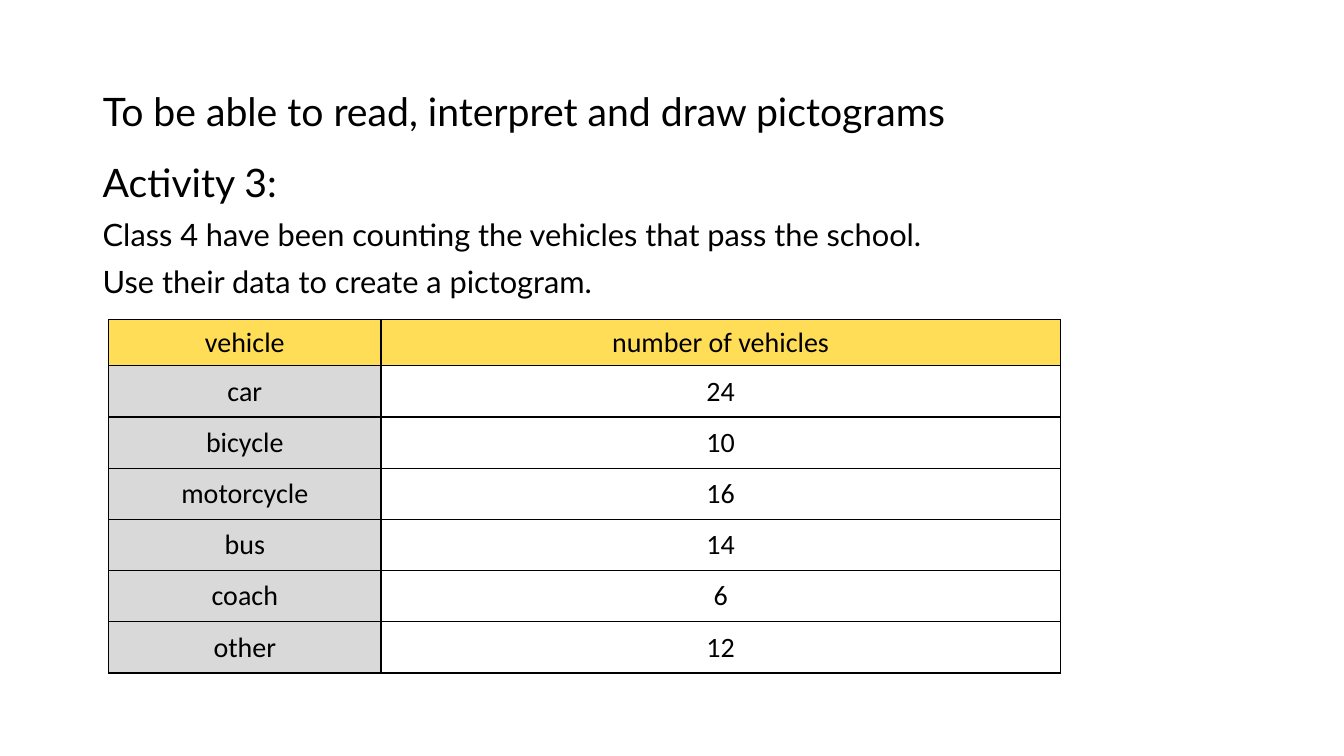
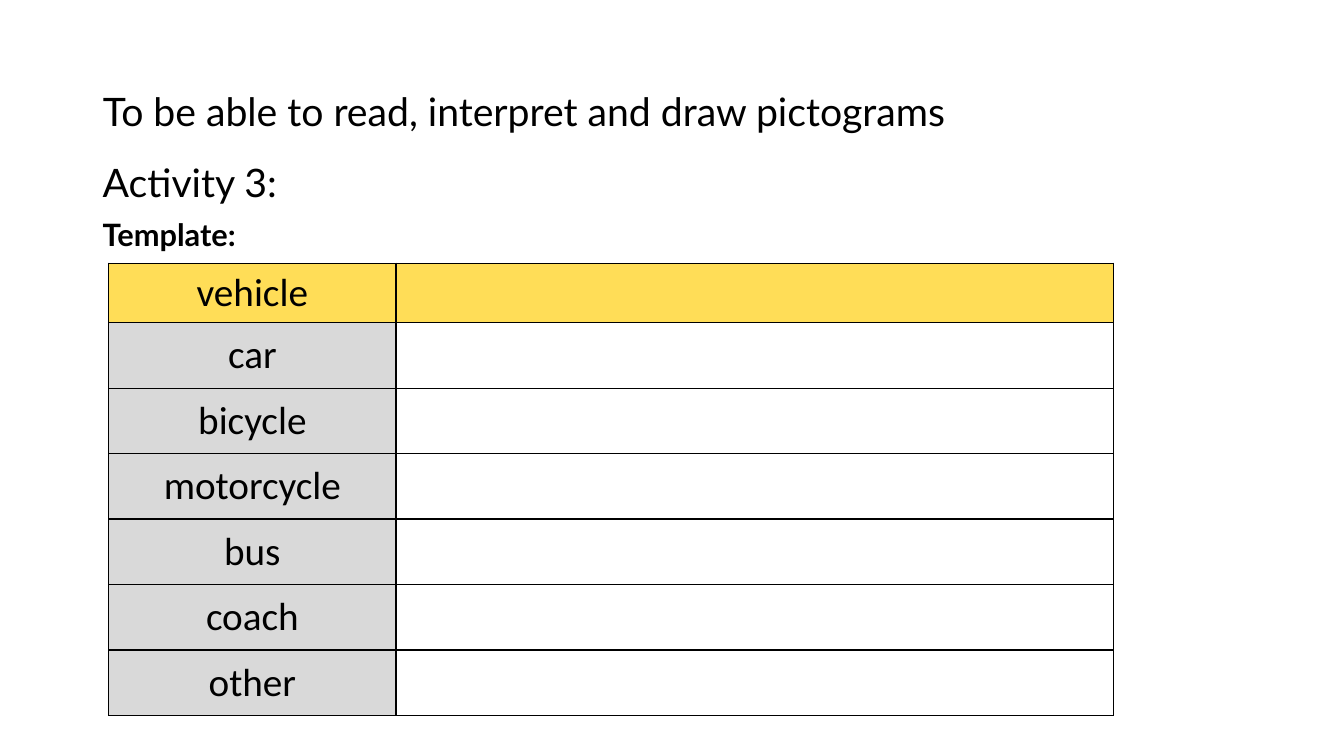
from lxml import etree
from pptx import Presentation
from pptx.dml.color import RGBColor
from pptx.enum.text import MSO_ANCHOR, PP_ALIGN
from pptx.oxml.ns import qn
from pptx.util import Cm, Pt

LEFT, CENTER = PP_ALIGN.LEFT, PP_ALIGN.CENTER
MIDDLE = MSO_ANCHOR.MIDDLE
TITLE_ONLY = 5

COLORS = {"text": "000000", "border": "000000", "header": "FFDD57",
          "label": "D9D9D9", "value": "FFFFFF"}
HEADING = {"name": "Lato", "size": Pt(28), "bold": False}
INSTRUCTION = {"name": "Lato", "size": Pt(22), "bold": False}
SUBHEADING = {"name": "Lato", "size": Pt(22), "bold": True}

TITLE = "To be able to read, interpret and draw pictograms"
ACTIVITY = ("Activity 3:", HEADING)
VEHICLE_COUNTS = [("car", "24"), ("bicycle", "10"), ("motorcycle", "16"),
                  ("bus", "14"), ("coach", "6"), ("other", "12")]

SLIDES = [
    {
        "lines": [
            ACTIVITY,
            ("Class 4 have been counting the vehicles that pass the school.", INSTRUCTION),
            ("Use their data to create a pictogram.", INSTRUCTION),
        ],
        "rows": [("vehicle", "number of vehicles"), *VEHICLE_COUNTS],
        "top": 8.05, "columns": (6.86, 17.12), "header": 1.17, "row": 1.29,
        "font": {"name": "Calibri", "size": Pt(20), "bold": False},
    },
    {
        "lines": [ACTIVITY, ("Template:", SUBHEADING)],
        "rows": [("vehicle", "")] + [(vehicle, "") for vehicle, _ in VEHICLE_COUNTS],
        "top": 6.63, "columns": (7.24, 18.08), "header": 1.5, "row": 1.65,
        "font": {"name": "Calibri", "size": Pt(28), "bold": False},
    },
]

TEXT_LEFT, TABLE_LEFT = Cm(2.34), Cm(2.74)


def add_text(paragraph, text, style, align):
    paragraph.alignment = align
    run = paragraph.add_run()
    run.text = text
    for attribute, value in style.items():
        setattr(run.font, attribute, value)
    run.font.color.rgb = RGBColor.from_string(COLORS["text"])


def place(shape, left, top, width, height):
    shape.left, shape.top, shape.width, shape.height = left, top, width, height


def add_borders(cell):
    """Draw all four cell edges; they must precede the fill in the XML."""
    properties = cell._tc.get_or_add_tcPr()
    for position, edge in enumerate(("a:lnL", "a:lnR", "a:lnT", "a:lnB")):
        line = etree.Element(qn(edge), w=str(Pt(1)))
        fill = etree.SubElement(line, qn("a:solidFill"))
        etree.SubElement(fill, qn("a:srgbClr"), val=COLORS["border"])
        properties.insert(position, line)


def add_title(slide):
    title = slide.shapes.title
    place(title, TEXT_LEFT, Cm(1.02), Cm(24.38), Cm(3.68))
    title.text_frame.vertical_anchor = MIDDLE
    paragraph = title.text_frame.paragraphs[0]
    paragraph.line_spacing = 0.9
    add_text(paragraph, TITLE, HEADING, LEFT)


def add_body(slide, lines):
    frame = slide.shapes.add_textbox(TEXT_LEFT, Cm(3.99), Cm(30), Cm(12.95)).text_frame
    frame.word_wrap = True
    for index, (text, style) in enumerate(lines):
        paragraph = frame.add_paragraph() if index else frame.paragraphs[0]
        paragraph.line_spacing = 0.9
        paragraph.space_before = Pt(10 if index else 0)
        add_text(paragraph, text, style, LEFT)


def add_vehicle_table(slide, content):
    rows, columns = content["rows"], content["columns"]
    heights = [content["header"]] + [content["row"]] * (len(rows) - 1)
    table = slide.shapes.add_table(
        len(rows), len(columns), TABLE_LEFT, Cm(content["top"]),
        Cm(sum(columns)), Cm(sum(heights))).table
    table.first_row = table.horz_banding = False
    for column, width in zip(table.columns, columns):
        column.width = Cm(width)
    for r, (texts, height) in enumerate(zip(rows, heights)):
        table.rows[r].height = Cm(height)
        for c, text in enumerate(texts):
            cell = table.cell(r, c)
            role = "header" if r == 0 else ("label", "value")[c]
            cell.fill.solid()
            cell.fill.fore_color.rgb = RGBColor.from_string(COLORS[role])
            cell.vertical_anchor = MIDDLE
            add_borders(cell)
            if text:
                add_text(cell.text_frame.paragraphs[0], text, content["font"], CENTER)


def main():
    deck = Presentation()
    deck.slide_width, deck.slide_height = Cm(33.87), Cm(19.05)
    for content in SLIDES:
        slide = deck.slides.add_slide(deck.slide_layouts[TITLE_ONLY])
        add_title(slide)
        add_body(slide, content["lines"])
        add_vehicle_table(slide, content)
    deck.save("out.pptx")


if __name__ == "__main__":
    main()
